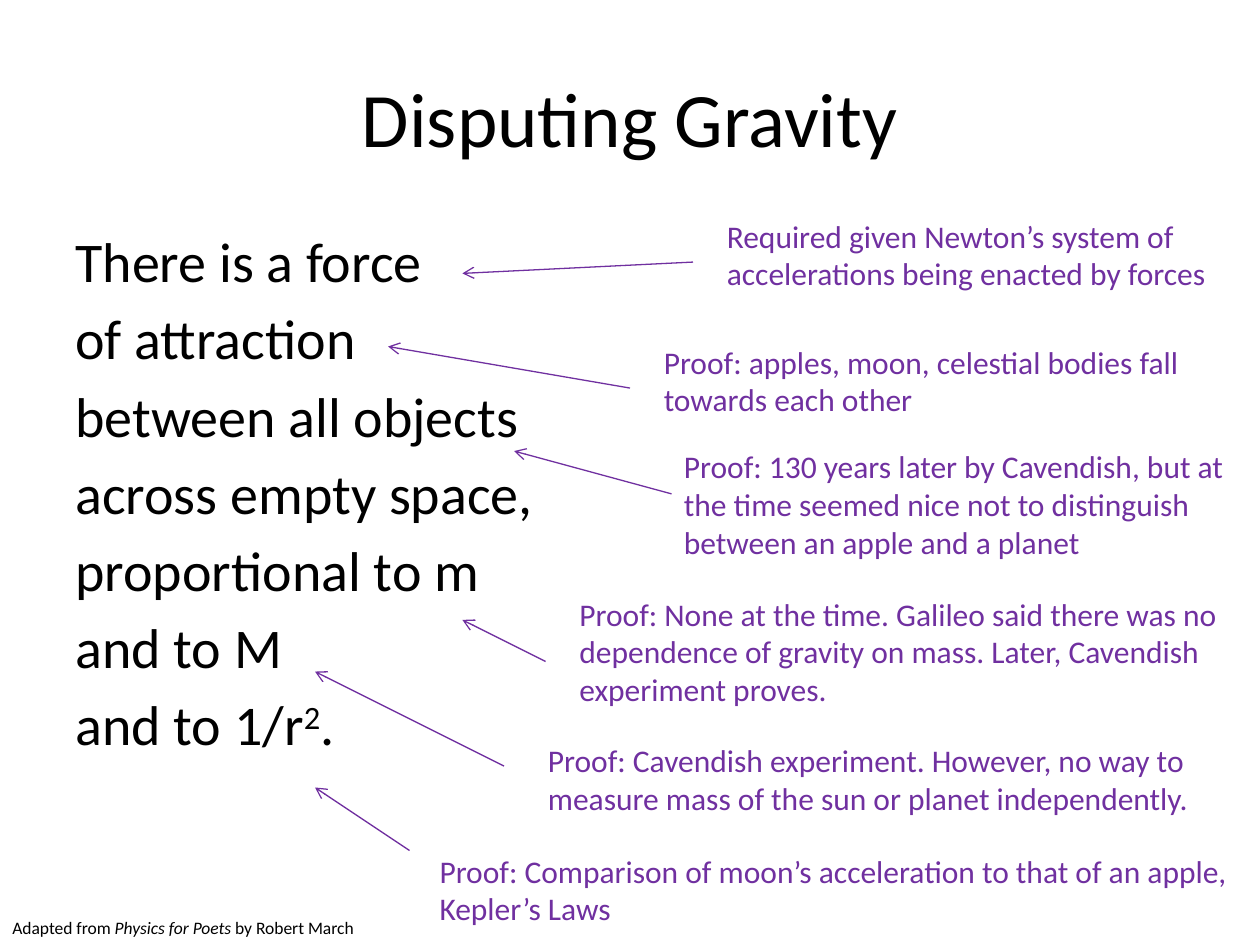
from pptx import Presentation
from pptx import util as u
from pptx.dml.color import RGBColor
from pptx.enum import shapes, text
from pptx.oxml import parse_xml
from pptx.oxml.ns import nsdecls

BLACK = RGBColor(0x00, 0x00, 0x00)
PURPLE = RGBColor(0x70, 0x30, 0xA0)
FONT = "Calibri"

# Content
TITLE = "Disputing Gravity"
CLAIMS = ["There is a force", "of attraction", "between all objects", "across empty space,",
          "proportional to m", "and to M", ("and to 1/r", "2", ".")]
CREDIT = ("Adapted from ", "Physics for Poets ", "by Robert March")
# Each proof: lines, box (left, top, width, height), arrow start, arrow end
PROOFS = [
    (["Required given Newton’s system of",
      "accelerations being enacted by forces"],
     (5.67, 1.67, 4.05, 0.71), (5.5, 2.08), (3.67, 2.17)),
    (["Proof: apples, moon, celestial bodies fall",
      "towards each other"],
     (5.17, 2.67, 4.34, 0.71), (5, 3.08), (3.08, 2.75)),
    (["Proof: 130 years later by Cavendish, but at",
      "the time seemed nice not to distinguish",
      "between an apple and a planet"],
     (5.33, 3.5, 4.54, 1.01), (5.33, 3.92), (4.08, 3.58)),
    (["Proof: None at the time. Galileo said there was no",
      "dependence of gravity on mass. Later, Cavendish",
      "experiment proves."],
     (4.5, 4.67, 5.32, 1.01), (4.33, 5.25), (3.67, 4.92)),
    (["Proof: Cavendish experiment. However, no way to",
      "measure mass of the sun or planet independently."],
     (4.25, 5.83, 5.31, 0.71), (4, 6.08), (2.5, 5.33)),
    (["Proof: Comparison of moon’s acceleration to that of an apple,",
      "Kepler’s Laws"],
     (3.39, 6.71, 6.53, 0.71), (3.25, 6.75), (2.5, 6.25)),
]


def inches(values):
    return [u.Inches(v) for v in values]


def style(r, size, color):
    r.font.name, r.font.size, r.font.color.rgb = FONT, u.Pt(size), color


def add_text(s, box, lines, size, color, wrap=False, space=0):
    """Add a text box; a line is a string or a tuple of runs."""
    tf = s.shapes.add_textbox(*inches(box)).text_frame
    tf.word_wrap = wrap
    for i, line in enumerate(lines):
        p = tf.paragraphs[0] if i == 0 else tf.add_paragraph()
        p.space_before = u.Pt(space)
        for part in [line] if isinstance(line, str) else line:
            r = p.add_run()
            r.text = part
            style(r, size, color)
    return tf


def add_arrow(s, start, end):
    line = s.shapes.add_connector(shapes.MSO_CONNECTOR.STRAIGHT, *inches(start + end))
    line.line.color.rgb = PURPLE
    line.line.width = u.Pt(0.75)
    line.line._get_or_add_ln().append(parse_xml(f'<a:tailEnd {nsdecls("a")} type="arrow"/>'))
    line._element.spPr.append(parse_xml(f'<a:effectLst {nsdecls("a")}/>'))


def main():
    prs = Presentation()
    prs.slide_width, prs.slide_height = inches((10, 7.5))
    s = prs.slides.add_slide(prs.slide_layouts[5])

    # Title
    title = s.shapes.title
    title.left, title.top, title.width, title.height = inches((0.5, 0.3, 9, 1.25))
    tf = title.text_frame
    tf.text = TITLE
    tf.vertical_anchor = text.MSO_ANCHOR.MIDDLE
    tf.paragraphs[0].alignment = text.PP_ALIGN.CENTER
    style(tf.paragraphs[0].runs[0], 44, BLACK)

    # Statement of the law, with the exponent raised
    tf = add_text(s, (0.5, 1.75, 9, 4.95), CLAIMS, 32, BLACK, wrap=True, space=5.7)
    tf.paragraphs[-1].runs[1]._r.get_or_add_rPr().set("baseline", "30000")

    # Proofs and their arrows
    for lines, box, start, end in PROOFS:
        add_arrow(s, start, end)
        add_text(s, box, lines, 18, PURPLE)

    # Credit, with the book title in italics
    tf = add_text(s, (0, 7.23, 2.96, 0.27), [CREDIT], 10, BLACK)
    tf.paragraphs[0].runs[1].font.italic = True

    prs.save("out.pptx")


if __name__ == "__main__":
    main()
